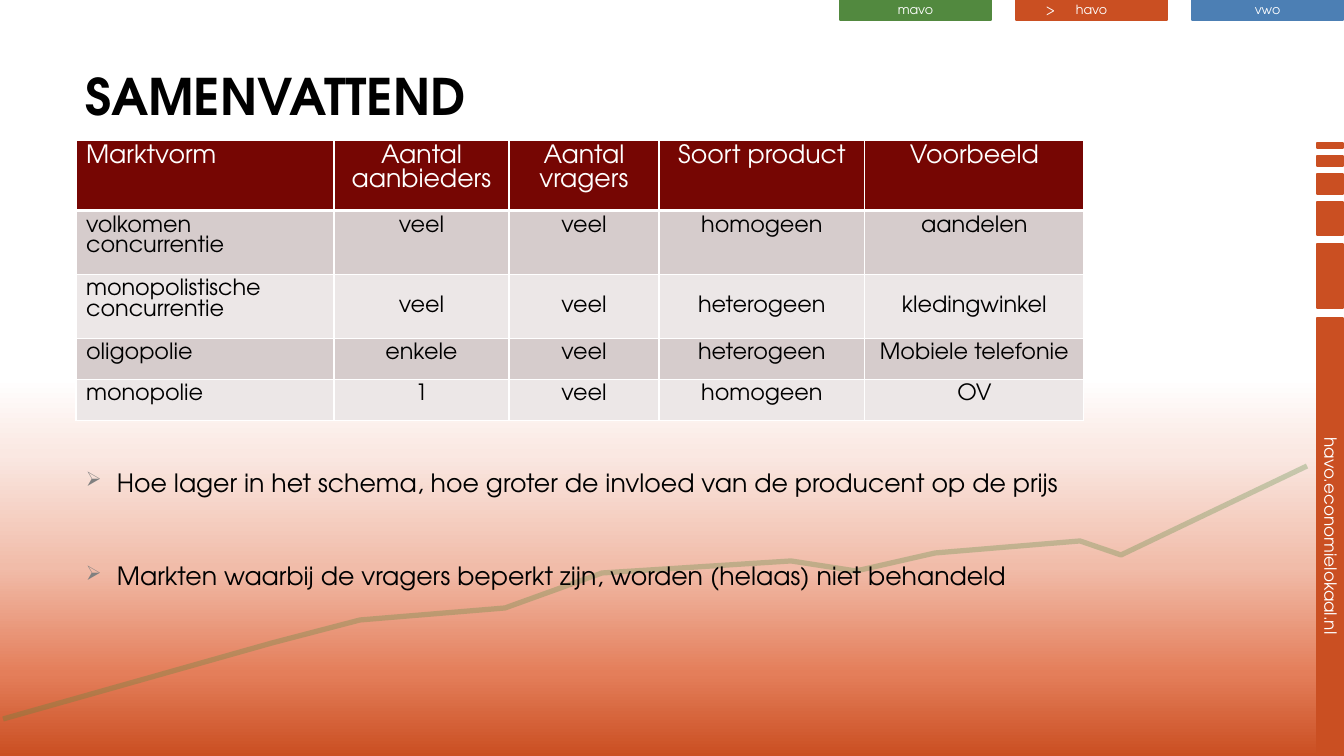
from lxml.etree import SubElement
from pptx import Presentation
from pptx.dml.color import RGBColor
from pptx.enum.shapes import MSO_SHAPE
from pptx.enum.text import MSO_ANCHOR, PP_ALIGN
from pptx.oxml.ns import qn
from pptx.util import Pt

SCALE = 914400 / 100.8
FONT = "TeX Gyre Adventor"
HUES = {
    "blue": "4C7FB4", "orange": "CA4F22", "green": "52893F", "white": "FFFFFF",
    "black": "000000", "gray": "808080", "head": "760603", "odd": "D6CCCC",
    "even": "ECE7E7", "coral": "E47E5A", "peach": "F1BCA9", "blush": "FAE8E2",
}
FADE = [(0, "orange"), (11, "coral"), (25, "peach"), (40, "blush"), (50, "white")]
TABS = [("mavo", "green"), ("havo", "orange"), ("vwo", "blue")]
BARS = [(143, 5), (156, 10), (174, 20), (202, 33), (244, 64)]
TREND = [(1307, 466), (1121, 555), (1080, 541), (935, 553), (856, 571), (791, 561),
         (602, 573), (505, 608), (360, 620), (272, 643), (3, 719)]
COLS = [258, 175, 150, 206, 219]
ROWS = [57, 52, 52, 41, 41]
CELLS = [
    ["Marktvorm", "Aantal aanbieders", "Aantal vragers", "Soort product", "Voorbeeld"],
    ["volkomen concurrentie", "veel", "veel", "homogeen", "aandelen"],
    ["monopolistische concurrentie", "veel", "veel", "heterogeen", "kledingwinkel"],
    ["oligopolie", "enkele", "veel", "heterogeen", "Mobiele telefonie"],
    ["monopolie", "1", "veel", "homogeen", "OV"],
]
POINTS = [
    "Hoe lager in het schema, hoe groter de invloed van de producent op de prijs",
    "Markten waarbij de vragers beperkt zijn, worden (helaas) niet behandeld",
]


def px(n):
    """Turn pixels into EMU."""
    return round(n * SCALE)


def rgb(hue):
    """Look up a named colour."""
    return RGBColor.from_string(HUES[hue])


def tint(parent, hue):
    """Add a solid colour element to an XML parent."""
    return SubElement(parent, qn("a:srgbClr"), val=HUES[hue])


def write(par, text, size=18, hue="black", bold=False, align=PP_ALIGN.LEFT):
    """Write one run of formatted text into a paragraph."""
    par.alignment = align
    run = par.add_run()
    run.text = text
    font = run.font
    font.name, font.size, font.bold = FONT, Pt(size), bold
    font.color.rgb = rgb(hue)


def frame(slide, x, y, w, h, wrap=True, anchor=MSO_ANCHOR.TOP):
    """Add a text box and return its text frame."""
    body = slide.shapes.add_textbox(px(x), px(y), px(w), px(h)).text_frame
    body.word_wrap, body.vertical_anchor = wrap, anchor
    return body


def block(slide, x, y, w, h, hue, text="", size=9, turn=0):
    """Add a plain coloured block with an optional label."""
    shape = slide.shapes.add_shape(MSO_SHAPE.RECTANGLE, px(x), px(y), px(w), px(h))
    shape.shadow.inherit = False
    shape.rotation = turn
    shape.fill.solid()
    shape.fill.fore_color.rgb = shape.line.color.rgb = rgb(hue)
    shape.line.width = Pt(1.25)
    body = shape.text_frame
    body.vertical_anchor = MSO_ANCHOR.MIDDLE
    body.margin_top, body.margin_bottom = 0, px(2)
    if text:
        write(body.paragraphs[0], text, size, "white", align=PP_ALIGN.CENTER)


def backdrop(slide):
    """Fade the background from orange at the foot to white."""
    fill = slide.background.fill
    fill.gradient()
    fill.gradient_angle = 90
    stops = slide.element.find(".//" + qn("a:gsLst"))
    for stop in list(stops):
        stops.remove(stop)
    for part, hue in FADE:
        tint(SubElement(stops, qn("a:gs"), pos=str(part * 1000)), hue)


def tabs(slide, x, y, w, h, step):
    """Draw the school level tabs and mark the current one."""
    for i, (name, hue) in enumerate(TABS):
        block(slide, x + i * step, y, w, h, hue, name)
    body = frame(slide, x + step + 20, y - 3, 36, 25, wrap=False)
    write(body.paragraphs[0], ">>", 9, "white")


def rail(slide, x, w):
    """Stack the upright bars along the right edge."""
    sides = [(top, size, "") for top, size in BARS]
    for top, size, text in sides + [(318, 436, "havo.economielokaal.nl")]:
        block(slide, x + (w - size) / 2, top + (size - w) / 2, size, w,
              "orange", text, 12, 90)


def trend(slide):
    """Draw the faint rising line."""
    pen = slide.shapes.build_freeform(*TREND[0], scale=SCALE)
    pen.add_line_segments(TREND[1:], close=False)
    shape = pen.convert_to_shape()
    shape.shadow.inherit = False
    shape.fill.background()
    shape.line.width = Pt(3.75)
    shape.line.color.rgb = rgb("green")
    color = shape.line._ln.find(".//" + qn("a:srgbClr"))
    SubElement(color, qn("a:alpha"), val="30000")


def edge(cell, foot):
    """Give a cell white borders, with its own foot width in points."""
    props = cell._tc.get_or_add_tcPr()
    for i, side in enumerate("LRTB"):
        width = foot if side == "B" else 1
        line = props.makeelement(qn("a:ln" + side), {"w": str(Pt(width))})
        tint(SubElement(line, qn("a:solidFill")), "white")
        props.insert(i, line)


def market(slide, x, y):
    """Build the table of market forms."""
    grid = slide.shapes.add_table(len(ROWS), len(COLS), px(x), px(y),
                                  px(sum(COLS)), px(sum(ROWS))).table
    for col, w in zip(grid.columns, COLS):
        col.width = px(w)
    for r, (h, texts) in enumerate(zip(ROWS, CELLS)):
        grid.rows[r].height = px(h)
        hue = "head" if r == 0 else ("even", "odd")[r % 2]
        for c, text in enumerate(texts):
            cell = grid.cell(r, c)
            cell.fill.solid()
            cell.fill.fore_color.rgb = rgb(hue)
            edge(cell, 1 if r else 3)
            if r == 2 and c:
                cell.vertical_anchor = MSO_ANCHOR.MIDDLE
            write(cell.text_frame.paragraphs[0], text, 16 if r else 18,
                  "black" if r else "white",
                  align=PP_ALIGN.CENTER if c else PP_ALIGN.LEFT)


def points(slide, x, y, w, h):
    """List the closing remarks with arrow bullets."""
    body = frame(slide, x, y, w, h)
    for i, text in enumerate(POINTS):
        par = body.add_paragraph() if i else body.paragraphs[0]
        par.space_before, par.space_after = Pt(39 if i else 0), Pt(6)
        props = par._p.get_or_add_pPr()
        props.set("marL", str(px(31)))
        props.set("indent", str(-px(31)))
        tint(SubElement(props, qn("a:buClr")), "gray")
        SubElement(props, qn("a:buSzPct"), val="80000")
        SubElement(props, qn("a:buChar"), char="➢")
        write(par, text)


def main():
    """Build the summary slide and save it."""
    deck = Presentation()
    deck.slide_width, deck.slide_height = px(1344), px(756)
    slide = deck.slides.add_slide(deck.slide_layouts[6])
    backdrop(slide)
    tabs(slide, 840, 0, 151, 20, 176)
    rail(slide, 1317, 26)
    trend(slide)
    title = frame(slide, 76, 50, 1011, 90, anchor=MSO_ANCHOR.MIDDLE)
    write(title.paragraphs[0], "SAMENVATTEND", 36, bold=True)
    points(slide, 76, 462, 1154, 247)
    market(slide, 76, 140)
    deck.save("out.pptx")


if __name__ == "__main__":
    main()
